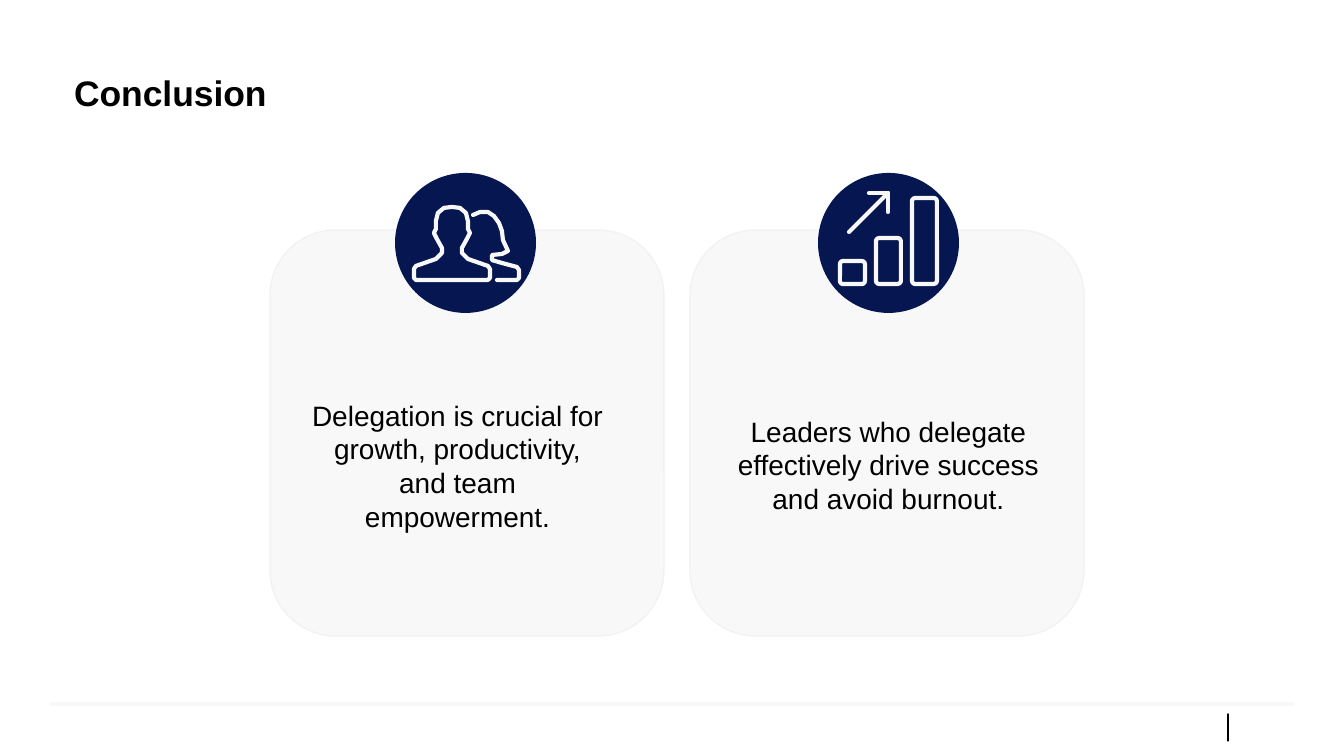
"""Build the conclusion slide with two icon cards."""
import pptx
import pptx.dml.color
import pptx.enum.shapes
import pptx.enum.text
import pptx.oxml.ns
import pptx.util
import lxml.etree

SCALE = 914400 / 134.4
SHAPES = pptx.enum.shapes.MSO_SHAPE
NAVY, PALE, EDGE, BLACK = "051651", "F8F8F8", "F2F2F2", "000000"


def px(*lengths):
    return [pptx.util.Emu(round(length * SCALE)) for length in lengths]


def paint(target, fill=None, line=None, width=0.75):
    color = pptx.dml.color.RGBColor.from_string
    if fill:
        target.fill.solid()
        target.fill.fore_color.rgb = color(fill)
    elif hasattr(target, "fill"):
        target.fill.background()
    if line:
        target.line.color.rgb = color(line)
        target.line.width = pptx.util.Pt(width)
        target.element.spPr.find(pptx.oxml.ns.qn("a:ln")).set("cap", "rnd")
    else:
        target.line.fill.background()
    if hasattr(target, "shadow"):
        target.shadow.inherit = False
    else:
        lxml.etree.SubElement(target.element.spPr, pptx.oxml.ns.qn("a:effectLst"))


presentation = pptx.Presentation()
presentation.slide_width, presentation.slide_height = px(1344, 756)
slide = presentation.slides.add_slide(presentation.slide_layouts[5])
shapes = slide.shapes

rules = [((1292, 704, 52, 704), PALE, 2.25), ((1228, 741, 1228, 714), BLACK, 0.75)]
for ends, color, width in rules:
    rule = shapes.add_connector(pptx.enum.shapes.MSO_CONNECTOR.STRAIGHT, *px(*ends))
    paint(rule, line=color, width=width)

title = shapes.title
title.left, title.top, title.width, title.height = px(74, 69, 1239, 47)
title.text_frame.text = "Conclusion"
texts = [(title, 19, True, pptx.enum.text.PP_ALIGN.LEFT)]

cards = [
    (270, 395, (309, 419, 297, 93),
     "Delegation is crucial for growth, productivity, and team empowerment."),
    (690, 818, (718, 418, 341, 93),
     "Leaders who delegate effectively drive success and avoid burnout."),
]
for card_left, badge_left, text_place, wording in cards:
    card = shapes.add_shape(SHAPES.ROUNDED_RECTANGLE, *px(card_left, 230, 394, 406))
    card.adjustments[0] = 0.167
    paint(card, PALE, EDGE)
    badge = shapes.add_shape(SHAPES.OVAL, *px(badge_left, 173, 141, 140))
    paint(badge, NAVY)
    box = shapes.add_textbox(*px(*text_place))
    box.text_frame.text = wording
    texts.append((box, 15, False, pptx.enum.text.PP_ALIGN.CENTER))

for shape, size, bold, alignment in texts:
    frame = shape.text_frame
    frame.word_wrap = True
    frame.auto_size = pptx.enum.text.MSO_AUTO_SIZE.NONE
    frame.vertical_anchor = pptx.enum.text.MSO_ANCHOR.MIDDLE
    frame.margin_left = frame.margin_right = frame.margin_top = frame.margin_bottom = 0
    paragraph = frame.paragraphs[0]
    paragraph.alignment = alignment
    font = paragraph.runs[0].font
    font.name, font.size, font.bold = "Arial", pptx.util.Pt(size), bold
    font.color.rgb = pptx.dml.color.RGBColor.from_string(BLACK)

man_axis = 452
man_half = [(0, 207), (8, 208), (14, 213), (16, 221), (16, 229), (18, 233), (15, 239),
            (10, 248), (10, 253), (16, 259), (36, 266), (38, 269), (38, 278), (36, 280)]
man = [(man_axis + x, y) for x, y in man_half]
man += [(man_axis - x, y) for x, y in reversed(man_half)]
woman = [(473, 215), (480, 212), (488, 212), (494, 216), (499, 223), (502, 231),
         (503, 240), (508, 251), (502, 254), (492, 255), (492, 260), (502, 263),
         (517, 267), (519, 270), (519, 278), (517, 280), (497, 280)]
arrow_shaft = [(849, 232), (888, 193)]
arrow_head = [(869, 193), (888, 193), (888, 212)]
for points, closed in [(man, True), (woman, False), (arrow_shaft, False), (arrow_head, False)]:
    builder = shapes.build_freeform(*points[0], scale=SCALE)
    builder.add_line_segments(points[1:], close=closed)
    paint(builder.convert_to_shape(), line=PALE, width=2.25)

for index, bar_top in enumerate([261, 238, 198]):
    bar = shapes.add_shape(SHAPES.ROUNDED_RECTANGLE,
                           *px(840 + 36 * index, bar_top, 25, 284 - bar_top))
    bar.adjustments[0] = 0.13
    paint(bar, line=PALE, width=2.25)

presentation.save("out.pptx")
